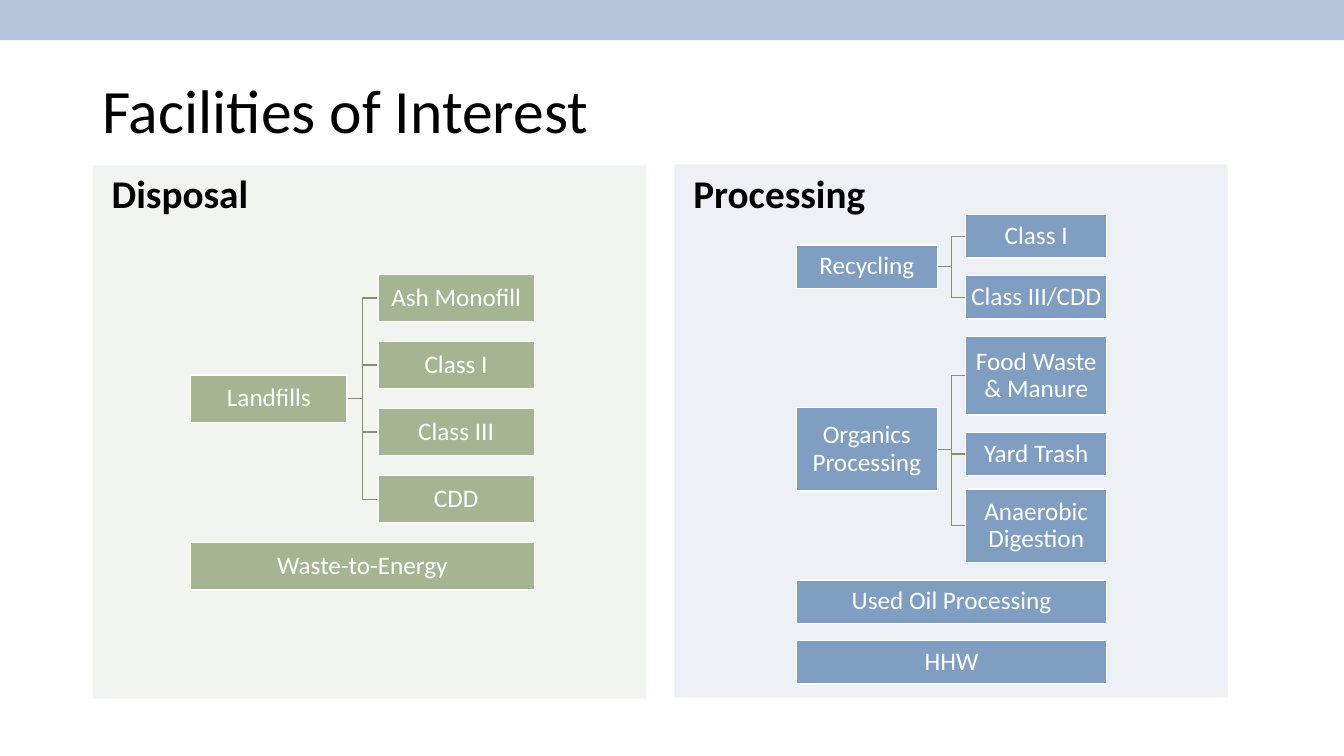
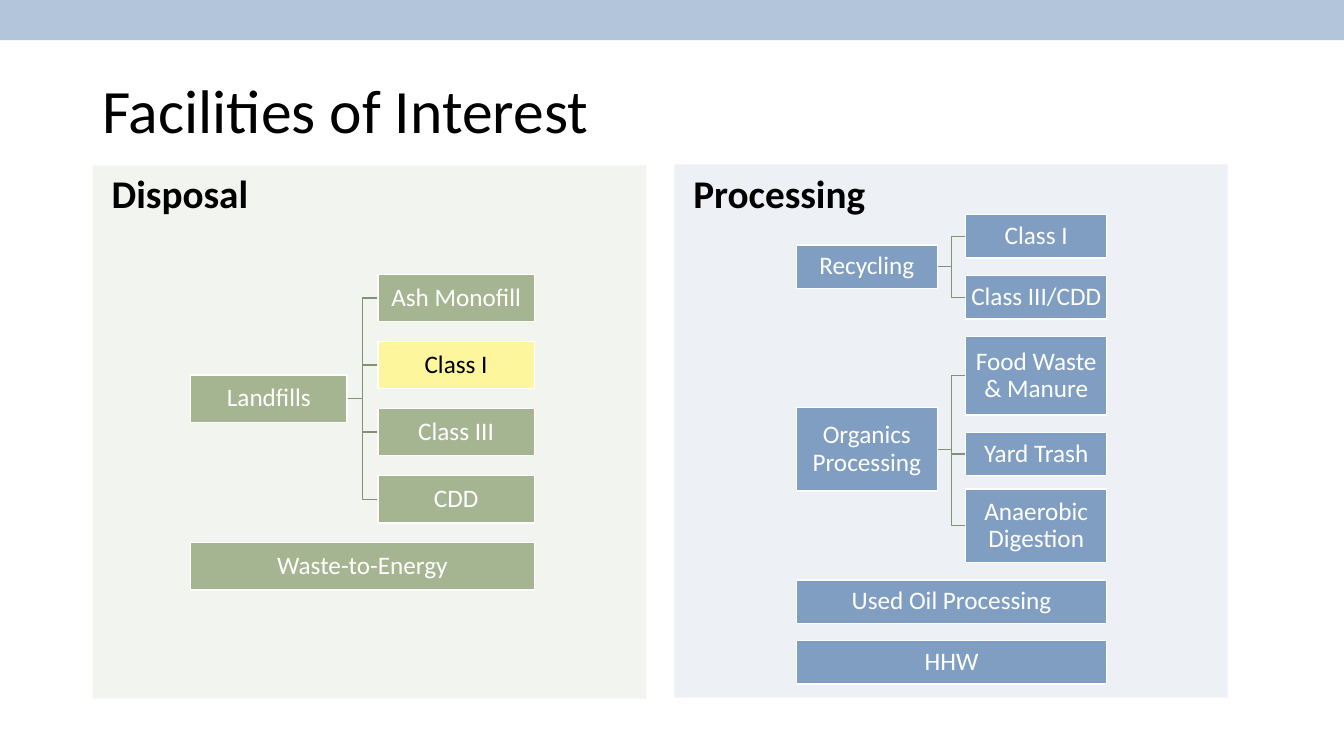
from dataclasses import dataclass
from typing import Optional

import lxml.etree
import pptx
import pptx.dml.color
import pptx.enum.shapes
import pptx.enum.text
import pptx.oxml.ns
import pptx.shapes.autoshape
import pptx.shapes.shapetree
import pptx.slide
import pptx.util

Pt = pptx.util.Pt
RGBColor = pptx.dml.color.RGBColor
Shapes = pptx.shapes.shapetree.GroupShapes
Align = pptx.enum.text.PP_ALIGN
Anchor = pptx.enum.text.MSO_ANCHOR

SKY = RGBColor(0xB3, 0xC5, 0xDA)
BLUE = RGBColor(0x80, 0x9E, 0xC2)
GREEN = RGBColor(0xA5, 0xB5, 0x92)
OLIVE = RGBColor(0x84, 0x91, 0x75)
YELLOW = RGBColor(0xFD, 0xF6, 0x9C)
WHITE = RGBColor(0xFF, 0xFF, 0xFF)
BLACK = RGBColor(0, 0, 0)

FONT = "Calibri"
WIDTH, HEIGHT = 960, 540


@dataclass(frozen=True)
class Leaf:
    text: str
    height: float
    gap: Optional[float] = None


@dataclass(frozen=True)
class Branch:
    text: str
    height: float
    leaves: tuple[Leaf, ...] = ()


@dataclass(frozen=True)
class Panel:
    title: str
    color: RGBColor
    left: float
    top: float
    tree_left: float
    tree_top: float
    box_width: float
    space: float
    gap: float
    branches: tuple[Branch, ...]


PANELS = (
    Panel("Processing", BLUE, 481.7, 117.4, 568.8, 153.4, 100.8, 20.2, 12.4, (
        Branch("Recycling", 31, (
            Leaf("Class I", 31),
            Leaf("Class III/CDD", 31),
        )),
        Branch("Organics Processing", 59.8, (
            Leaf("Food Waste & Manure", 56.2),
            Leaf("Yard Trash", 31),
            Leaf("Anaerobic Digestion", 52.6, gap=9.4),
        )),
        Branch("Used Oil Processing", 31),
        Branch("HHW", 31),
    )),
    Panel("Disposal", GREEN, 66.2, 118.1, 136.2, 195.9, 111.6, 22.2, 14, (
        Branch("Landfills", 33.9, tuple(
            Leaf(text, 33.9)
            for text in ("Ash Monofill", "Class I", "Class III", "CDD")
        )),
        Branch("Waste-to-Energy", 33.9),
    )),
)


def add_rect(shapes: Shapes, left: float, top: float, width: float,
             height: float, color: RGBColor) -> pptx.shapes.autoshape.Shape:
    rect = shapes.add_shape(pptx.enum.shapes.MSO_SHAPE.RECTANGLE,
                            Pt(left), Pt(top), Pt(width), Pt(height))
    rect.shadow.inherit = False
    rect.fill.solid()
    rect.fill.fore_color.rgb = color
    rect.line.fill.background()
    return rect


def set_text(shape: pptx.shapes.autoshape.Shape, text: str, size: float,
             color: RGBColor, align: Align, bold: bool = False,
             spacing: float = 1.0) -> None:
    para = shape.text_frame.paragraphs[0]
    para.text = text
    para.alignment = align
    para.line_spacing = spacing
    para.font.name = FONT
    para.font.size = Pt(size)
    para.font.bold = bold
    para.font.color.rgb = color


def add_label(slide: pptx.slide.Slide, text: str, left: float, top: float,
              width: float, height: float, size: float, anchor: Anchor,
              wrap: bool, bold: bool, spacing: float) -> None:
    label = slide.shapes.add_textbox(Pt(left), Pt(top), Pt(width), Pt(height))
    label.text_frame.word_wrap = wrap
    label.text_frame.vertical_anchor = anchor
    set_text(label, text, size, BLACK, Align.LEFT, bold, spacing)


def add_box(shapes: Shapes, text: str, left: float, top: float, width: float,
            height: float, color: RGBColor) -> None:
    box = add_rect(shapes, left, top, width, height, color)
    box.line.color.rgb = WHITE
    box.line.width = Pt(1)
    frame = box.text_frame
    frame.word_wrap = True
    frame.vertical_anchor = Anchor.MIDDLE
    frame.margin_left = frame.margin_right = Pt(0.9)
    frame.margin_top = frame.margin_bottom = Pt(0.9)
    ink = BLACK if color == YELLOW else WHITE
    set_text(box, text, 18, ink, Align.CENTER, spacing=0.9)


def add_wire(shapes: Shapes, left: float, start: float, right: float,
             end: float) -> None:
    mid = (left + right) / 2
    maker = shapes.build_freeform(Pt(left), Pt(start))
    maker.add_line_segments(
        [(Pt(x), Pt(y)) for x, y in ((mid, start), (mid, end), (right, end))],
        close=False)
    wire = maker.convert_to_shape()
    wire.shadow.inherit = False
    wire.fill.background()
    wire.line.color.rgb = OLIVE
    wire.line.width = Pt(1)


def add_tree(slide: pptx.slide.Slide, panel: Panel,
             marked: Optional[str]) -> None:
    shapes = slide.shapes.add_group_shape().shapes
    left, width = panel.tree_left, panel.box_width
    leaf_left = left + width + panel.space
    top = panel.tree_top
    for branch in panel.branches:
        if not branch.leaves:
            add_box(shapes, branch.text, left, top, 2 * width + panel.space,
                    branch.height, panel.color)
            top += branch.height + panel.gap
            continue
        tops = []
        end = top - panel.gap
        for leaf in branch.leaves:
            tops.append(end + (panel.gap if leaf.gap is None else leaf.gap))
            end = tops[-1] + leaf.height
        mid = (top + end) / 2
        for leaf, leaf_top in zip(branch.leaves, tops):
            add_wire(shapes, left + width, mid, leaf_left,
                     leaf_top + leaf.height / 2)
        add_box(shapes, branch.text, left, mid - branch.height / 2, width,
                branch.height, panel.color)
        for leaf, leaf_top in zip(branch.leaves, tops):
            color = YELLOW if leaf.text == marked else panel.color
            add_box(shapes, leaf.text, leaf_left, leaf_top, width,
                    leaf.height, color)
        top = end + panel.gap


def add_panel(slide: pptx.slide.Slide, panel: Panel) -> None:
    back = add_rect(slide.shapes, panel.left, panel.top, 395.3, 380.9,
                    panel.color)
    qn = pptx.oxml.ns.qn
    tint = back.element.spPr.find(qn("a:solidFill")).find(qn("a:srgbClr"))
    lxml.etree.SubElement(tint, qn("a:alpha")).set("val", "14000")


def add_slide(deck: pptx.presentation.Presentation,
              marks: dict[str, str]) -> None:
    slide = deck.slides.add_slide(deck.slide_layouts[6])
    add_rect(slide.shapes, 0, 0, WIDTH, 28.8, SKY)
    add_label(slide, "Facilities of Interest", 66, 28.8, 828, 104.4, 44,
              Anchor.MIDDLE, True, False, 0.9)
    for panel in PANELS:
        add_panel(slide, panel)
    for panel in PANELS:
        add_tree(slide, panel, marks.get(panel.title))
        add_label(slide, panel.title, panel.left + 6.5, 117.4, 138, 41, 28,
                  Anchor.TOP, False, True, 1.0)


def main() -> None:
    deck = pptx.Presentation()
    deck.slide_width, deck.slide_height = Pt(WIDTH), Pt(HEIGHT)
    for marks in ({}, {"Disposal": "Class I"}):
        add_slide(deck, marks)
    deck.save("out.pptx")


if __name__ == "__main__":
    main()
